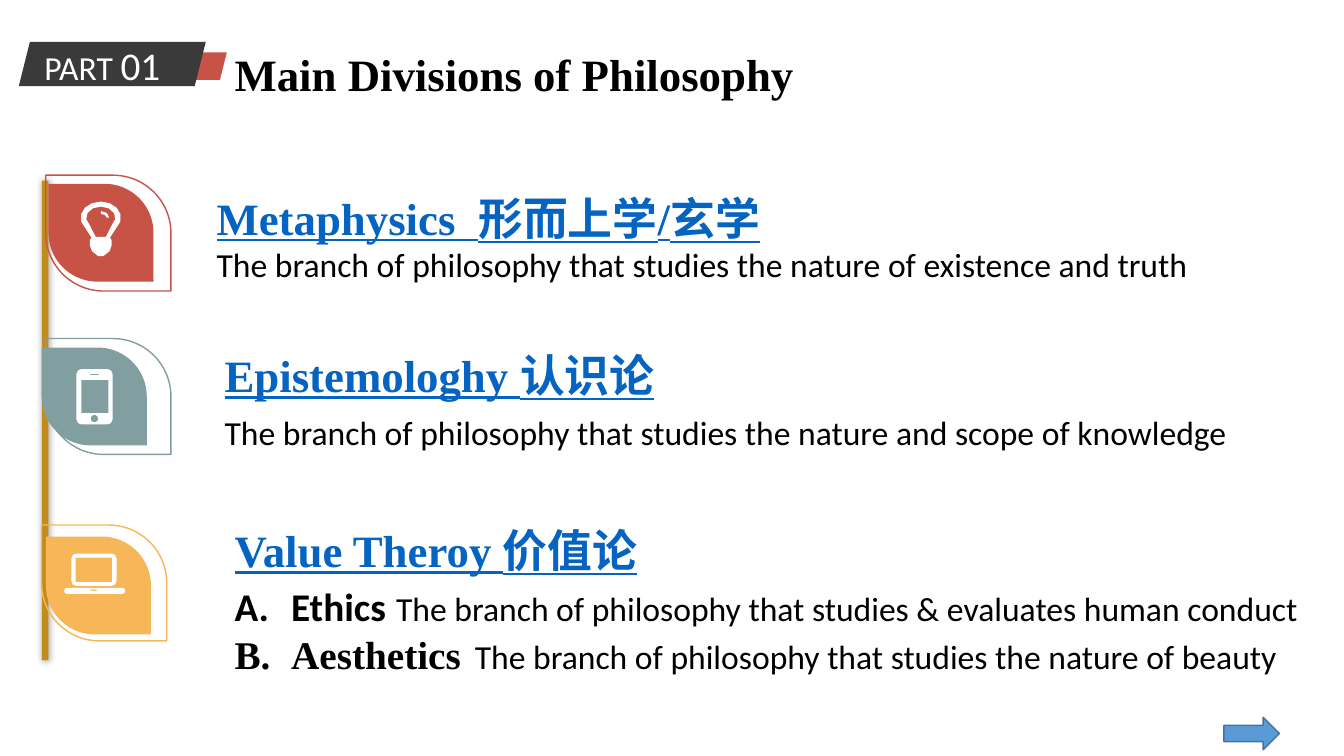
import math

import pptx
import pptx.dml.color
import pptx.enum.shapes
import pptx.oxml
import pptx.oxml.ns
import pptx.util

COLUMNS, ROWS = 160, 90
WIDTH, HEIGHT = pptx.util.Inches(13.33), pptx.util.Inches(7.5)
SHAPES = pptx.enum.shapes.MSO_SHAPE
RED, TEAL, AMBER = "C75346", "819FA1", "F7B759"
WHITE, BLACK = "FFFFFF", "000000"
TEXT_LEFT = 26.74

HEADING = {"size": 32, "name": "Times New Roman", "bold": True, "underline": True, "color": "0563C1"}
BODY = {"size": 24, "name": "Calibri", "color": BLACK}
TITLE = HEADING | {"underline": False, "color": BLACK}
LABEL = BODY | {"color": WHITE}
TERM = TITLE | {"size": 28}


def x(columns):
    return round(WIDTH * columns / COLUMNS)


def y(rows):
    return round(HEIGHT * rows / ROWS)


def frame(left, top, width, height):
    return x(left), y(top), x(width), y(height)


def paint(target, color):
    target.solid()
    target.fore_color.rgb = pptx.dml.color.RGBColor.from_string(color)


def style_shape(shape, fill=None, line=None):
    shape.shadow.inherit = False
    if fill:
        paint(shape.fill, fill)
    else:
        shape.fill.background()
    if line:
        paint(shape.line.fill, line)
        shape.line.width = pptx.util.Pt(1)
    else:
        shape.line.fill.background()


def add_block(page, kind, place, fill=None, line=None):
    shape = page.shapes.add_shape(kind, *frame(*place))
    style_shape(shape, fill, line)
    return shape


def add_leaf(page, place, fill=None, line=None):
    leaf = add_block(page, SHAPES.ROUND_2_DIAG_RECTANGLE, place, fill, line)
    leaf.rotation = 270
    leaf.adjustments[0] = 0.5
    leaf.adjustments[1] = 0


def add_glow(shape):
    effects = shape._element.spPr.find(pptx.oxml.ns.qn("a:effectLst"))
    effects.append(pptx.oxml.parse_xml(
        f'<a:outerShdw {pptx.oxml.ns.nsdecls("a")} blurRad="63500" dist="0" rotWithShape="0">'
        '<a:srgbClr val="000000"><a:alpha val="40000"/></a:srgbClr></a:outerShdw>'))


def add_text(page, place, paragraphs, inset=None, space=0, numbered=()):
    box = page.shapes.add_textbox(*frame(*place))
    text = box.text_frame
    text.word_wrap = True
    if inset is not None:
        for side in ("left", "top", "right", "bottom"):
            setattr(text, f"margin_{side}", inset)
    for index, spans in enumerate(paragraphs):
        para = text.paragraphs[0] if index == 0 else text.add_paragraph()
        para.space_before = pptx.util.Pt(space)
        if index in numbered:
            add_letter(para)
        for words, formats in spans:
            add_span(para, words, formats)


def add_letter(para):
    properties = para._p.get_or_add_pPr()
    indent = x(6.75)
    properties.set("marL", str(indent))
    properties.set("indent", str(-indent))
    properties.append(pptx.oxml.parse_xml(
        f'<a:buAutoNum {pptx.oxml.ns.nsdecls("a")} type="alphaUcPeriod"/>'))


def add_span(para, words, formats):
    span = para.add_run()
    span.text = words
    for key, value in formats.items():
        if key == "color":
            paint(span.font.fill, value)
        else:
            setattr(span.font, key, pptx.util.Pt(value) if key == "size" else value)


def arc(center_x, center_y, radius_x, radius_y, start, end, steps):
    angles = [math.radians(start + (end - start) * step / steps) for step in range(steps + 1)]
    return [(center_x + radius_x * math.cos(angle), center_y + radius_y * math.sin(angle))
            for angle in angles]


def oblong(left, top, width, height):
    right, bottom = left + width, top + height
    return [(left, top), (right, top), (right, bottom), (left, bottom)]


def rounded(left, top, width, height, radius):
    corners = oblong(left + radius, top + radius, width - 2 * radius, height - 2 * radius)
    return [point for turn, (across, down) in enumerate(corners)
            for point in arc(across, down, radius, radius, 90 * turn - 180, 90 * turn - 90, 2)]


def mirrored(points, center):
    return points + [(2 * center - across, down) for across, down in reversed(points)]


def bulb():
    middle, head = 2.4, 1.92
    base = [(3.5, 4.3), (3.7, 4.6), (3.7, 5.2), (3.45, 5.9), (2.7, 6.5)]
    glass = mirrored(arc(middle, head, 2.4, 1.92, -90, 40, 5) + base, middle)
    hollow = mirrored(arc(middle, head, 1.74, 1.32, -90, 40, 4) + [(3, 4.2)], middle)
    shine = arc(middle, head, 1, 0.8, -90, 0, 2) + arc(middle, head, 0.72, 0.45, 0, -90, 2)
    return [glass, hollow, shine]


def phone():
    return [rounded(0, 0, 4.3, 6.6, 0.6), oblong(0.6, 1.3, 3.2, 3.96),
            oblong(1.6, 0.6, 1.1, 0.12), arc(2.15, 5.9, 0.45, 0.45, 0, 360, 10)]


def laptop():
    return [rounded(0.84, 0, 5.4, 3.85, 0.6), oblong(1.35, 0.5, 4.35, 2.9),
            rounded(0, 4.1, 7.25, 0.7, 0.3), oblong(3.15, 4.3, 0.75, 0.15)]


def add_icon(page, left, top, contours):
    outlines = [[(x(left + across), y(top + down)) for across, down in contour]
                for contour in contours]
    builder = page.shapes.build_freeform(*outlines[0][0])
    for index, outline in enumerate(outlines):
        if index:
            builder.move_to(*outline[0])
        builder.add_line_segments(outline[1:], close=True)
    style_shape(builder.convert_to_shape(), WHITE)


def add_header(page):
    add_block(page, SHAPES.PARALLELOGRAM, (20.5, 6.25, 6.5, 3.25), RED)
    add_block(page, SHAPES.PARALLELOGRAM, (2.25, 5, 22.25, 5.25), "3A3A3A")
    add_text(page, (TEXT_LEFT, 5, 79.2, 7.7), [[("Main Divisions of Philosophy", TITLE)]])
    add_text(page, (4.1, 4.35, 18.5, 6.8), [[("PART ", LABEL), ("01", LABEL | {"size": 28})]])


def add_markers(page):
    add_glow(add_block(page, SHAPES.RECTANGLE, (5, 21.5, 0.75, 57.1), "C28C1C"))
    markers = [
        (RED, (6, 20.3), (6.2, 21.45), (9.6, 24), bulb()),
        (TEAL, (6, 39.75), (5.4, 40.95), (9.1, 43.93), phone()),
        (AMBER, (5.5, 61.95), (5.9, 63.45), (7.65, 65.9), laptop()),
    ]
    for color, outline, leaf, icon, contours in markers:
        add_leaf(page, (*outline, 13.8, 14.9), line=color)
        add_leaf(page, (*leaf, 11.65, 12.5), fill=color)
        add_icon(page, *icon, contours)


def add_divisions(page):
    add_text(page, (TEXT_LEFT, 41.4, 127.8, 17.5), [
        [("Epistemologhy ", HEADING), ("认识论", HEADING | {"name": "Arial"})],
        [("The branch of philosophy that studies the nature and scope of knowledge", BODY)],
    ], inset=0, space=7.5)
    add_text(page, (24.6, 22.1, 118.7, 12.5), [
        [("Metaphysics  形而上学/玄学", HEADING)],
        [("The branch of philosophy that studies the nature of existence and truth", BODY)],
    ])
    add_text(page, (TEXT_LEFT, 61.63, 130.9, 25.8), [
        [("Value Theroy ", HEADING), ("价值论", HEADING | {"name": "Calibri"})],
        [("Ethics", TERM | {"name": "Calibri"}), (" ", TITLE | {"name": "Calibri"}),
         ("The branch of philosophy that studies & evaluates human conduct", BODY)],
        [("Aesthetics", TERM), (" ", BODY | {"size": 20}),
         (" The branch of philosophy that studies the nature of beauty", BODY)],
    ], numbered=(1, 2))


def main():
    deck = pptx.Presentation()
    deck.slide_width, deck.slide_height = WIDTH, HEIGHT
    page = deck.slides.add_slide(deck.slide_layouts[6])
    add_header(page)
    add_markers(page)
    add_divisions(page)
    add_block(page, SHAPES.RIGHT_ARROW, (145.7, 85.4, 6.6, 3.85), "5B9BD5", "43739E")
    deck.save("out.pptx")


if __name__ == "__main__":
    main()
